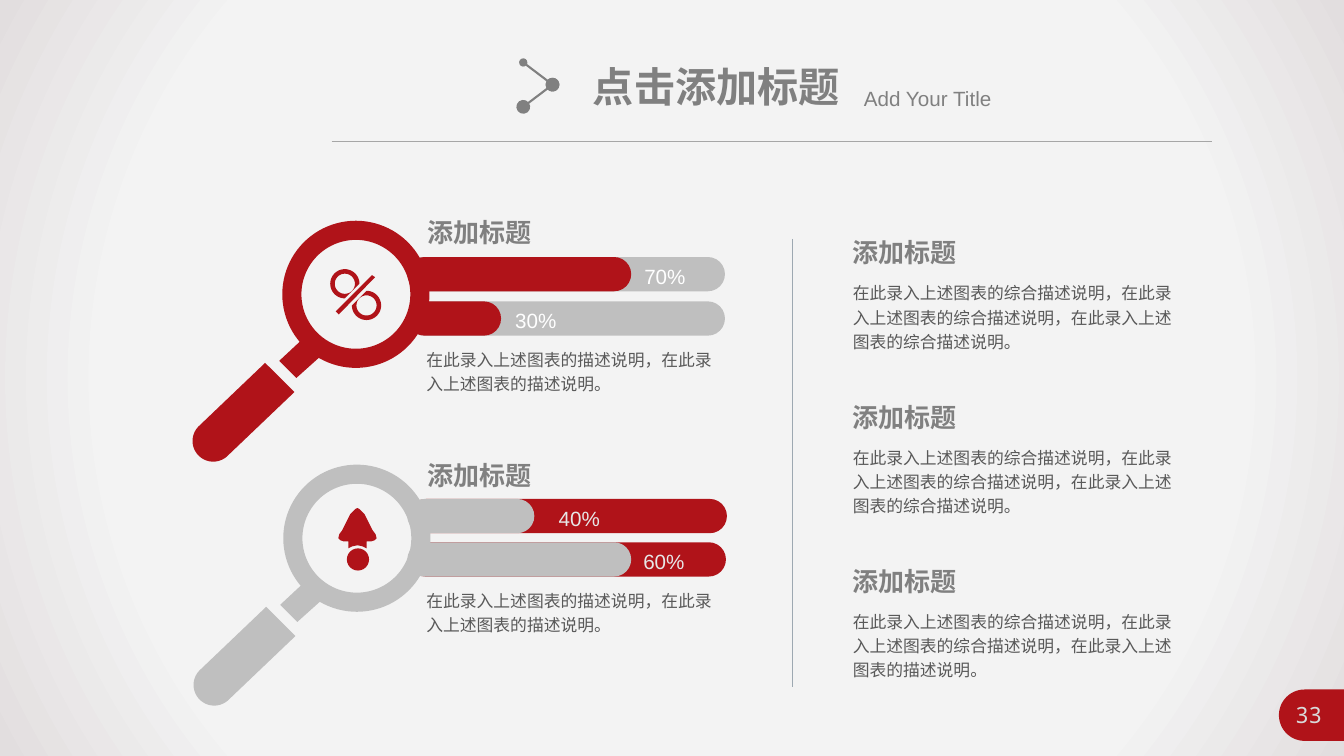
import math
from dataclasses import dataclass

from lxml import etree
from pptx import Presentation
from pptx import util as u
from pptx.dml.color import RGBColor
from pptx.enum import shapes, text
from pptx.oxml import parse_xml
from pptx.oxml.ns import nsdecls, qn

PX = 9144  # EMU per px, 100 px to the inch
RED, SILVER, GREY, DARK = "B01319", "BFBFBF", "808080", "595959"
WHITE, PALE = "FFFFFF", "E7E7E7"
CJK = "Noto Sans CJK SC"
Point = tuple[float, float]


@dataclass
class Bar:
    track_left: int
    top: int
    done: int
    label: str
    label_left: int


@dataclass
class Finding:
    """A magnifier with its heading, bars and description."""
    color: str
    rest_color: str
    label_color: str
    shift: Point
    heading_top: int
    body_top: int
    bars: list[Bar]


@dataclass
class Summary:
    top: int
    body: str


FINDINGS = [
    Finding(RED, SILVER, WHITE, (0, 0), 210, 338,
            [Bar(404, 255, 222, "70%", 624), Bar(404, 299, 93, "30%", 496)]),
    Finding(SILVER, RED, PALE, (1, 242), 451, 577,
            [Bar(406, 495, 126, "40%", 539), Bar(405, 538, 222, "60%", 623)]),
]
CLAUSE = "在此录入上述图表的综合描述说明"
ENDINGS = [CLAUSE, CLAUSE, "在此录入上述图表的描述说明"]
SUMMARIES = [Summary(230 + 163 * i, f"{CLAUSE}，{CLAUSE}，{ending}。")
             for i, ending in enumerate(ENDINGS)]
FINDING_BODY = "在此录入上述图表的描述说明，在此录入上述图表的描述说明。"
HEADING = "添加标题"


def rgb(color: str) -> RGBColor:
    return RGBColor.from_string(color)


def emu(*lengths: float) -> list[int]:
    return [round(length * PX) for length in lengths]


def paint(shape, color: str):
    shape.fill.solid()
    shape.fill.fore_color.rgb = rgb(color)
    shape.line.fill.background()
    shape.shadow.inherit = False
    return shape


def add_preset(slide, kind, box: tuple, color: str, adjust: float | None = None) -> None:
    shape = paint(slide.shapes.add_shape(kind, *emu(*box)), color)
    if adjust is not None:
        shape.adjustments[0] = adjust


def add_outline(slide, color: str, *contours: list[Point], shift: Point = (0, 0)) -> None:
    moved = [[emu(x + shift[0], y + shift[1]) for x, y in contour] for contour in contours]
    builder = slide.shapes.build_freeform(*moved[0][0], scale=1.0)
    for i, (start, *rest) in enumerate(moved):
        if i:
            builder.move_to(*start)
        builder.add_line_segments(rest, close=True)
    paint(builder.convert_to_shape(), color)


def arc(cx: float, cy: float, radius: float, start: int, end: int) -> list[Point]:
    """Points along an arc, in degrees clockwise from the right."""
    steps = 36
    angles = [math.radians(start + (end - start) * i / steps) for i in range(steps + 1)]
    return [(cx + radius * math.cos(a), cy + radius * math.sin(a)) for a in angles]


def add_line(slide, start: Point, end: Point, color: str, width: float,
             head: str = "", tail: str = "") -> None:
    line = slide.shapes.add_connector(shapes.MSO_CONNECTOR.STRAIGHT, *emu(*start, *end))
    line.line.color.rgb = rgb(color)
    line.line.width = u.Pt(width)
    for tag, size in (("a:headEnd", head), ("a:tailEnd", tail)):
        if size:
            etree.SubElement(line.line._get_or_add_ln(), qn(tag), type="oval", w=size, len=size)
    etree.SubElement(line._element.spPr, qn("a:effectLst"))


def write(slide, content: str, box: tuple, *, size: float, color: str, font: str = CJK,
          bold: bool = False, align=text.PP_ALIGN.LEFT, spacing: float = 1.0,
          wrap: bool = True, holder=None) -> None:
    """Fill the given placeholder, or a new text box, with one formatted paragraph."""
    holder = holder or slide.shapes.add_textbox(0, 0, 0, 0)
    holder.left, holder.top, holder.width, holder.height = emu(*box)
    frame = holder.text_frame
    frame.word_wrap = wrap
    frame.auto_size = text.MSO_AUTO_SIZE.NONE
    frame.vertical_anchor = text.MSO_ANCHOR.TOP
    paragraph = frame.paragraphs[0]
    paragraph.alignment = align
    paragraph.line_spacing = spacing
    run = paragraph.add_run()
    run.text = content
    run.font.size = u.Pt(size)
    run.font.bold = bold
    run.font.name = font
    run.font.color.rgb = rgb(color)
    etree.SubElement(run.font._element, qn("a:ea"), typeface=CJK)


def write_heading(slide, left: int, top: int) -> None:
    write(slide, HEADING, (left, top, 125, 42), size=18.6, color=GREY, bold=True, wrap=False)


def write_body(slide, content: str, box: tuple) -> None:
    write(slide, content, box, size=12, color=DARK, spacing=1.2)


def set_background(slide) -> None:
    slide.background.fill.gradient()
    gradient = slide.element.find(".//" + qn("a:gradFill"))
    stops = "".join(f'<a:gs pos="{at}000"><a:srgbClr val="{color}"/></a:gs>'
                    for at, color in ((0, "F5F5F5"), (73, "F3F3F3"), (100, "E2DEDF")))
    gradient.getparent().replace(gradient, parse_xml(
        f'<a:gradFill {nsdecls("a")} rotWithShape="1"><a:gsLst>{stops}</a:gsLst>'
        '<a:path path="circle"><a:fillToRect l="50000" t="50000" r="50000" b="50000"/>'
        '</a:path></a:gradFill>'))


def add_header(slide) -> None:
    write(slide, "点击添加标题", (578, 56, 267, 59), size=29.4, color=GREY, font="Arial",
          bold=True, wrap=False, holder=slide.shapes.title)
    write(slide, "Add Your Title", (847, 80, 252, 35), size=14.7, color=GREY, font="Arial")
    add_line(slide, (329, 140), (1202, 140), "A6A6A6", 0.5)
    add_line(slide, (519, 62), (548, 84), GREY, 1.5, head="med", tail="lg")
    add_line(slide, (548, 84), (519, 106), GREY, 1.5, head="lg", tail="lg")


def add_page_tab(slide) -> None:
    add_outline(slide, RED, arc(1294, 709.5, 25.5, 90, 270) + [(1333, 684), (1333, 735)])
    write(slide, "33", (1265, 691, 66, 37), size=16, color="D9D9D9", font="Noto Sans Mono",
          align=text.PP_ALIGN.CENTER)


def add_bar(slide, bar: Bar, finding: Finding) -> None:
    pill = shapes.MSO_SHAPE.ROUNDED_RECTANGLE
    add_preset(slide, pill, (bar.track_left, bar.top, 315, 34), finding.rest_color, 0.5)
    add_preset(slide, pill, (404, bar.top, bar.done, 34), finding.color, 0.5)
    write(slide, bar.label, (bar.label_left, bar.top - 3, 71, 40), size=14.7, font="Arial",
          color=finding.label_color, align=text.PP_ALIGN.CENTER, spacing=1.2)


def add_magnifier(slide, color: str, shift: Point) -> None:
    neck = [(323, 349), (294, 375), (277, 358), (306, 331)]
    grip = [(263, 360), *arc(211.5, 437.5, 20.5, 225, 45), (292, 389)]
    add_outline(slide, color, neck, shift=shift)
    add_outline(slide, color, grip, shift=shift)
    add_preset(slide, shapes.MSO_SHAPE.DONUT, (280 + shift[0], 219 + shift[1], 146, 146),
               color, 0.13)


def add_percent_sign(slide) -> None:
    for cx, cy, start in ((342, 281.5, 90), (363.5, 303, 270)):
        add_outline(slide, RED, arc(cx, cy, 14.5, start, start + 270), arc(cx, cy, 10, 0, 360))
    add_outline(slide, RED, [(372, 275), (336, 312), (333, 309), (369, 273)])


def add_arrow_sign(slide) -> None:
    axis = 354.5
    half = [(0, 504), (2, 505), (4, 507), (7, 510), (15, 526), (18, 530), (19, 534),
            (17, 536), (14, 537), (9, 537), (9, 544), (5, 542), (0, 541)]
    add_outline(slide, RED, [(axis + dx, y) for dx, y in half]
                + [(axis - dx, y) for dx, y in half[-2:0:-1]])
    add_preset(slide, shapes.MSO_SHAPE.OVAL, (344, 544, 22, 22), RED)


def main() -> None:
    deck = Presentation()
    deck.slide_width, deck.slide_height = emu(1333, 750)
    slide = deck.slides.add_slide(deck.slide_layouts[5])
    set_background(slide)
    add_header(slide)
    add_page_tab(slide)
    add_line(slide, (786, 237), (786, 682), "9DA8B1", 1)
    for finding in FINDINGS:
        for bar in finding.bars:
            add_bar(slide, bar, finding)
        add_magnifier(slide, finding.color, finding.shift)
        write_heading(slide, 414, finding.heading_top)
        write_body(slide, FINDING_BODY, (413, finding.body_top, 308, 59))
    add_percent_sign(slide)
    add_arrow_sign(slide)
    for summary in SUMMARIES:
        write_heading(slide, 836, summary.top)
        write_body(slide, summary.body, (836, summary.top + 42, 347, 83))
    deck.save("out.pptx")


if __name__ == "__main__":
    main()
